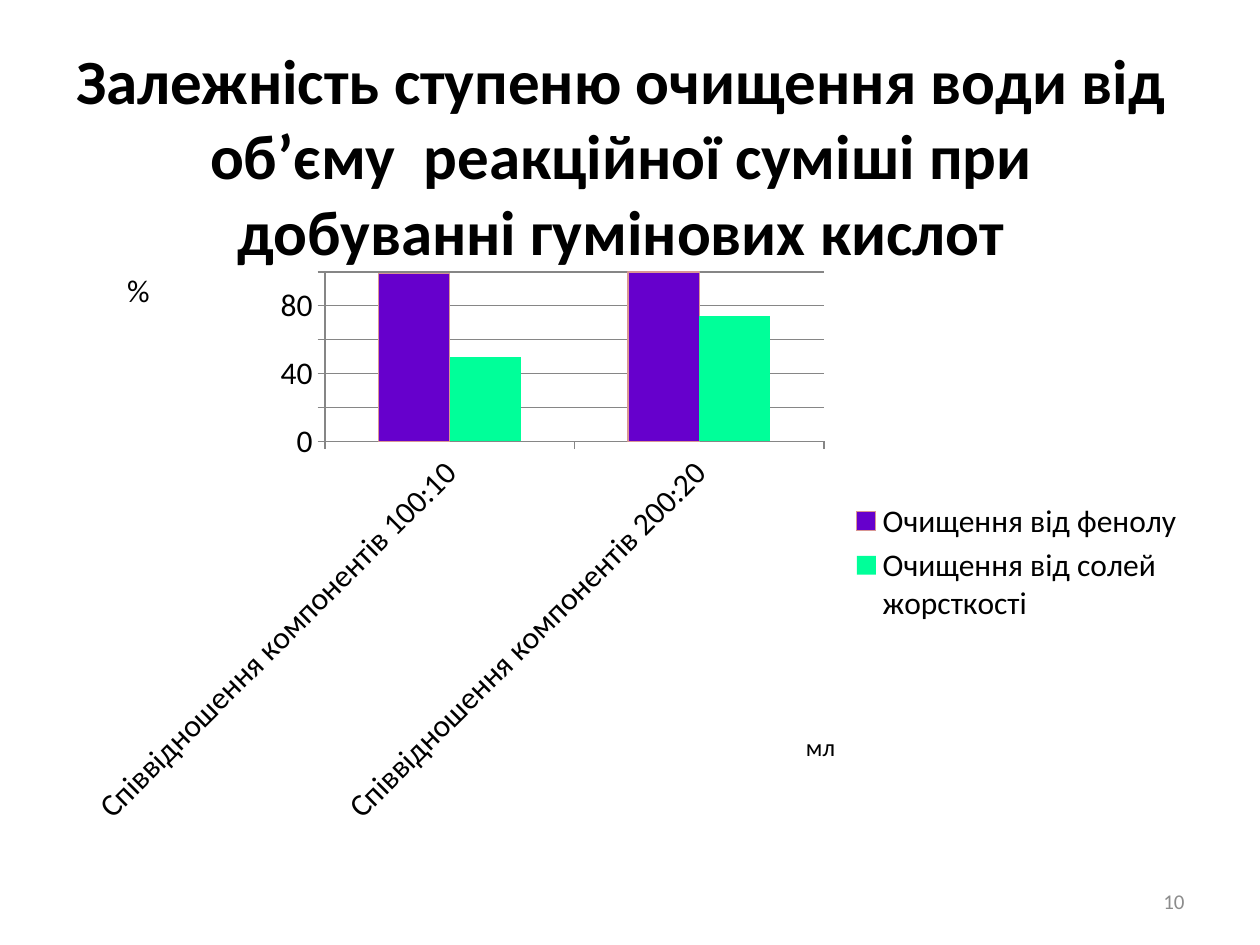
import pptx
import pptx.chart.data
import pptx.dml.color
import pptx.enum.chart
import pptx.enum.text
import pptx.oxml
import pptx.oxml.ns
import pptx.util

BLACK = pptx.dml.color.RGBColor(0x00, 0x00, 0x00)
GRAY = pptx.dml.color.RGBColor(0x8C, 0x8C, 0x8C)
GRID = pptx.dml.color.RGBColor(0x86, 0x86, 0x86)
VIOLET = pptx.dml.color.RGBColor(0x66, 0x00, 0xCC)
GREEN = pptx.dml.color.RGBColor(0x00, 0xFF, 0x99)
ROSE = pptx.dml.color.RGBColor(0xD9, 0x96, 0x94)
FONT = "Calibri"
ALIGN = pptx.enum.text.PP_ALIGN
ANCHOR = pptx.enum.text.MSO_ANCHOR

prs = pptx.Presentation()
prs.slide_width = pptx.util.Inches(10)
prs.slide_height = pptx.util.Inches(7.5)
W, H = prs.slide_width, prs.slide_height
s = prs.slides.add_slide(prs.slide_layouts[6])


def add_text(text, x, y, w, h, size=18, color=BLACK, bold=False,
             align=ALIGN.LEFT, anchor=ANCHOR.TOP, wrap=True):
    sp = s.shapes.add_textbox(int(x * W), int(y * H), int(w * W), int(h * H))
    tf = sp.text_frame
    tf.word_wrap = wrap
    tf.vertical_anchor = anchor
    p = tf.paragraphs[0]
    p.alignment = align
    r = p.add_run()
    r.text = text
    r.font.name = FONT
    r.font.size = pptx.util.Pt(size)
    r.font.bold = bold
    r.font.color.rgb = color


def set_layout(element, index, target=None, **shares):
    for old in element.findall(pptx.oxml.ns.qn("c:layout")):
        element.remove(old)
    tags = [("layoutTarget", target)] if target else []
    tags += [("xMode", "edge"), ("yMode", "edge"), *shares.items()]
    body = "".join(f'<c:{tag} val="{value}"/>' for tag, value in tags)
    element.insert(index, pptx.oxml.parse_xml(
        f'<c:layout {pptx.oxml.ns.nsdecls("c")}>'
        f"<c:manualLayout>{body}</c:manualLayout></c:layout>"))


add_text("10", 0.717, 0.927, 0.233, 0.053, size=12, color=GRAY,
         align=ALIGN.RIGHT, anchor=ANCHOR.MIDDLE)
add_text("Залежність ступеню очищення води від об’єму  реакційної суміші "
         "при добуванні гумінових кислот", 0.043, 0.08, 0.9, 0.167,
         size=36, bold=True, align=ALIGN.CENTER, anchor=ANCHOR.MIDDLE)

data = pptx.chart.data.CategoryChartData()
data.categories = [f"Співвідношення компонентів {ratio}" for ratio in ("100:10", "200:20")]
data.add_series("Очищення від фенолу", (99, 100))
data.add_series("Очищення від солей жорсткості", (50, 74))
chart = s.shapes.add_chart(
    pptx.enum.chart.XL_CHART_TYPE.COLUMN_CLUSTERED,
    int(0.051 * W), int(0.275 * H), int(0.9 * W), int(0.64 * H), data).chart
chart.has_title = False
chart.font.name = FONT
chart.font.size = pptx.util.Pt(18)
chart.font.color.rgb = BLACK

plot = chart.plots[0]
plot.gap_width = 150
plot.overlap = 0
plot.vary_by_categories = False
for series, color in zip(plot.series, (VIOLET, GREEN)):
    series.format.fill.solid()
    series.format.fill.fore_color.rgb = color
    series.invert_if_negative = False
line = plot.series[0].format.line
line.color.rgb = ROSE
line.width = pptx.util.Pt(0.75)

cat, val = chart.category_axis, chart.value_axis
val.minimum_scale, val.maximum_scale, val.major_unit = 0, 100, 20
val.has_major_gridlines = True
for axis in (cat, val):
    axis.major_tick_mark = pptx.enum.chart.XL_TICK_MARK.OUTSIDE
    axis.tick_labels.font.size = pptx.util.Pt(18)
for item in (cat, val, val.major_gridlines):
    item.format.line.color.rgb = GRID
    item.format.line.width = pptx.util.Pt(0.75)
cat._element.txPr.find(pptx.oxml.ns.qn("a:bodyPr")).set("rot", "-2700000")

p = cat.axis_title.text_frame.paragraphs[0]
r = p.add_run()
r.text = "мл"
r.font.name = FONT
r.font.size = pptx.util.Pt(14)
r.font.bold = False
r.font.color.rgb = BLACK

chart.has_legend = True
chart.legend.position = pptx.enum.chart.XL_LEGEND_POSITION.RIGHT
chart.legend.include_in_layout = False

set_layout(chart._chartSpace.chart.plotArea, 0, target="inner", x=0.23, y=0.02, w=0.44, h=0.28)
set_layout(cat.axis_title._element, 1, x=0.65, y=0.77)
set_layout(chart.legend._element, 1, x=0.69, y=0.39, w=0.3, h=0.22)

add_text("%", 0.091, 0.28, 0.031, 0.053, wrap=False)

prs.save("out.pptx")
